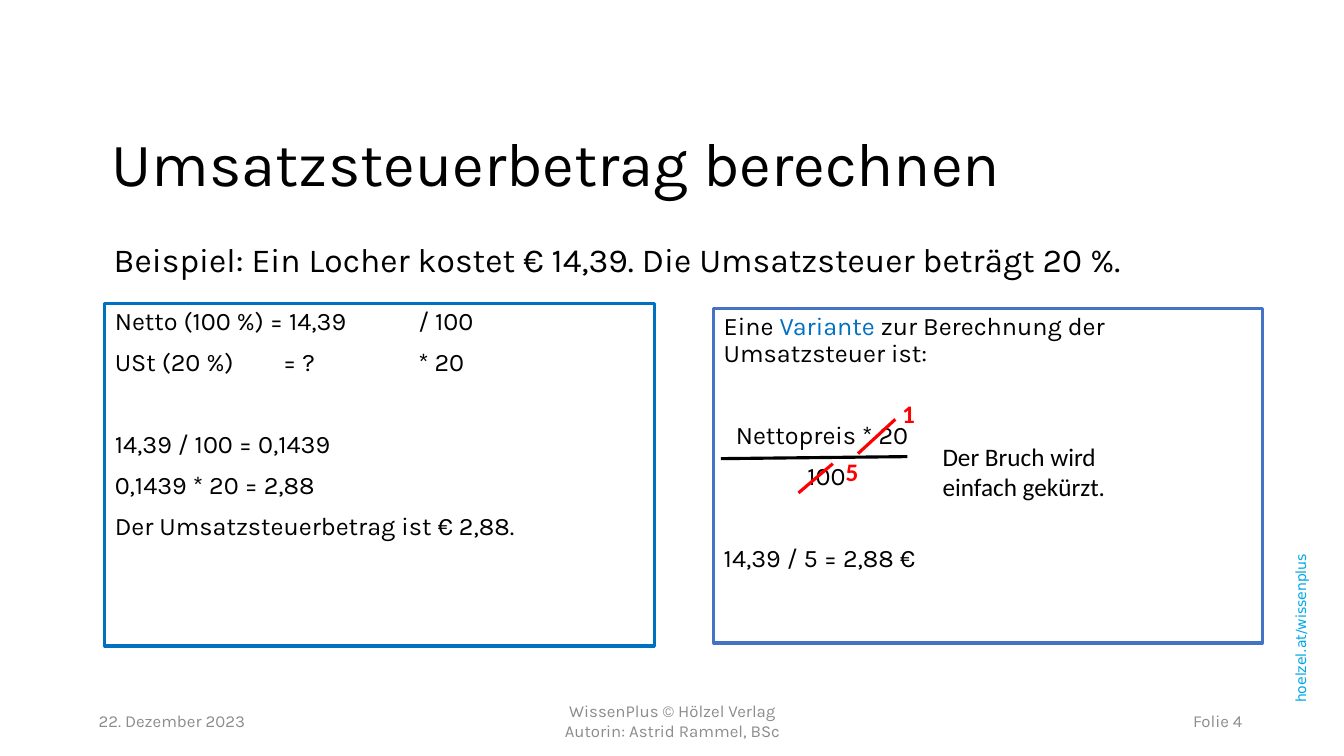
import lxml.etree
import pptx
import pptx.dml.color
import pptx.enum.shapes
import pptx.enum.text
import pptx.oxml.ns
import pptx.util

Inches = pptx.util.Inches
Align = pptx.enum.text.PP_ALIGN
Anchor = pptx.enum.text.MSO_ANCHOR
BLACK, BLUE, RED, GRAY = "000000", "0070C0", "FF0000", "8C8C8C"
LINE_GAP, BLANK_GAP = 10, 39


def rgb(value):
    """Return the colour for a hex string."""
    return pptx.dml.color.RGBColor.from_string(value)


def format_runs(para, size=18, font="Karla", color=BLACK, bold=False):
    """Format every run of a paragraph."""
    for span in para.runs:
        span.font.size = pptx.util.Pt(size)
        span.font.name = font
        span.font.bold = bold
        span.font.color.rgb = rgb(color)


def add_text(page, box, text, align=Align.LEFT, anchor=Anchor.TOP, spacing=1.0, **style):
    """Add a wrapped text box with one paragraph and return its shape."""
    shape = page.shapes.add_textbox(*map(Inches, box))
    frame = shape.text_frame
    frame.word_wrap = True
    frame.vertical_anchor = anchor
    para = frame.paragraphs[0]
    para.text = text
    para.alignment = align
    para.line_spacing = spacing
    format_runs(para, **style)
    return shape


def add_line(page, start, end, color):
    """Add a straight line between two points."""
    line = page.shapes.add_connector(
        pptx.enum.shapes.MSO_CONNECTOR.STRAIGHT, *map(Inches, start + end))
    line.line.color.rgb = rgb(color)
    line.line.width = pptx.util.Pt(2.25)
    lxml.etree.SubElement(line._element.spPr, pptx.oxml.ns.qn("a:effectLst"))


def add_panel(page, box, border, rows):
    """Add a framed panel with rows of (text, space before, indent)."""
    panel = page.shapes.add_shape(
        pptx.enum.shapes.MSO_SHAPE.RECTANGLE, *map(Inches, box))
    panel.shadow.inherit = False
    panel.fill.background()
    panel.line.color.rgb = rgb(border)
    panel.line.width = pptx.util.Pt(2.25)
    frame = panel.text_frame
    frame.word_wrap = True
    frame.vertical_anchor = Anchor.TOP
    for index, (text, gap, indent) in enumerate(rows):
        para = frame.add_paragraph() if index else frame.paragraphs[0]
        para.text = text
        para.alignment = Align.LEFT
        para.line_spacing = 0.9
        para.space_before = pptx.util.Pt(gap)
        para._p.get_or_add_pPr().set("marL", str(Inches(indent)))
        format_runs(para)
    return frame


def add_tabs(para, stops):
    """Give a paragraph left tab stops in inches."""
    tabs = lxml.etree.SubElement(para._p.get_or_add_pPr(), pptx.oxml.ns.qn("a:tabLst"))
    for stop in stops:
        lxml.etree.SubElement(tabs, pptx.oxml.ns.qn("a:tab"), pos=str(Inches(stop)), algn="l")


def add_heading(page, left, top):
    """Add the title and the example sentence."""
    add_text(page, (left, top, 10.45, 1.12), "Umsatzsteuerbetrag berechnen",
             anchor=Anchor.MIDDLE, spacing=0.9, size=44)
    add_text(page, (left + 0.02, top + 1.18, 10.96, 0.55),
             "Beispiel: Ein Locher kostet € 14,39. Die Umsatzsteuer beträgt 20 %.",
             anchor=Anchor.BOTTOM, spacing=0.9, size=24)


def add_calculation(page, box):
    """Add the panel with the step-by-step calculation."""
    frame = add_panel(page, box, BLUE, [
        ("Netto (100 %) = 14,39\t/ 100", 0, 0),
        ("USt (20 %)\t= ?\t* 20", LINE_GAP, 0),
        ("14,39 / 100 = 0,1439", BLANK_GAP, 0),
        ("0,1439 * 20 = 2,88", LINE_GAP, 0),
        ("Der Umsatzsteuerbetrag ist € 2,88.", LINE_GAP, 0),
    ])
    for para in frame.paragraphs[:2]:
        add_tabs(para, (1.67, 3.01))


def add_variant(page, box):
    """Add the panel with the reduced fraction."""
    left, top = box[:2]
    frame = add_panel(page, box, "4472C4", [
        ("Eine ", 0, 0),
        ("Nettopreis * 20", BLANK_GAP, 0.12),
        ("100", LINE_GAP, 0.83),
        ("14,39 / 5 = 2,88 €", BLANK_GAP, 0),
    ])
    intro = frame.paragraphs[0]
    for text in ("Variante", " zur Berechnung der Umsatzsteuer ist:"):
        intro.add_run().text = text
    format_runs(intro)
    intro.runs[1].font.color.rgb = rgb(BLUE)

    add_line(page, (left + 0.07, top + 1.49), (left + 1.92, top + 1.47), BLACK)
    add_text(page, (left + 2.17, top + 1.27, 1.9, 0.71),
             "Der Bruch wird einfach gekürzt.", font="Calibri")
    add_line(page, (left + 1.8, top + 1.1), (left + 1.43, top + 1.44), RED)
    add_line(page, (left + 1.18, top + 1.54), (left + 0.84, top + 1.83), RED)
    for digit, x, y in (("5", 1.21, 1.42), ("1", 1.77, 0.84)):
        add_text(page, (left + x, top + y, 0.4, 0.4), digit,
                 font="Calibri", color=RED, bold=True)


def add_footer(page, left, top):
    """Add the date, the publisher and the slide number."""
    for offset, width, text, align in (
            (0, 3, "22. Dezember 2023", Align.LEFT),
            (3.54, 4.5, "WissenPlus © Hölzel Verlag\vAutorin: Astrid Rammel, BSc", Align.CENTER),
            (8.54, 3, "Folie 4", Align.RIGHT)):
        add_text(page, (left + offset, top, width, 0.4), text, align,
                 Anchor.MIDDLE, size=12, color=GRAY)


def add_side_label(page, box):
    """Add the web address running up the right edge."""
    label = add_text(page, box, "hoelzel.at/wissenplus", Align.CENTER,
                     spacing=0.9, size=10, font="DejaVu Sans", color="00A7E7")
    label.rotation = 270


def main():
    """Build the slide and save the deck."""
    deck = pptx.Presentation()
    deck.slide_width, deck.slide_height = Inches(13.33), Inches(7.5)
    page = deck.slides.add_slide(deck.slide_layouts[6])
    add_side_label(page, (11.43, 6.12, 2.94, 0.23))
    add_heading(page, 1.01, 1.09)
    add_calculation(page, (1.04, 3.01, 5.45, 3.4))
    add_variant(page, (7.08, 3.06, 5.44, 3.32))
    add_footer(page, 0.88, 6.95)
    deck.save("out.pptx")


if __name__ == "__main__":
    main()
